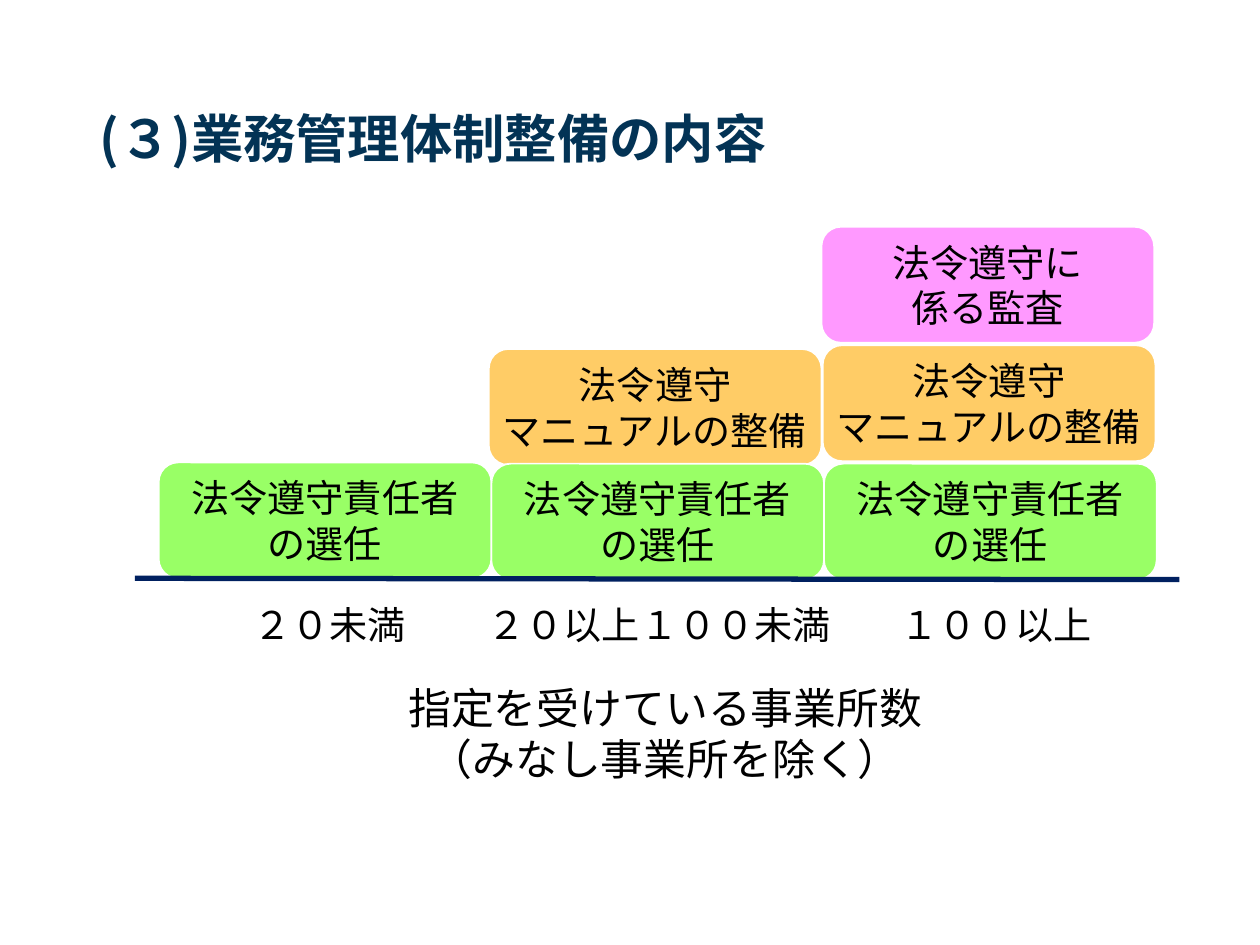
from dataclasses import dataclass

from lxml import etree
from pptx import Presentation
from pptx.dml.color import RGBColor
from pptx.enum.shapes import MSO_CONNECTOR, MSO_SHAPE
from pptx.enum.text import MSO_ANCHOR, PP_ALIGN
from pptx.oxml.ns import qn
from pptx.util import Inches, Pt

ROUNDED = MSO_SHAPE.ROUNDED_RECTANGLE
STRAIGHT = MSO_CONNECTOR.STRAIGHT
MIDDLE, TOP = MSO_ANCHOR.MIDDLE, MSO_ANCHOR.TOP
CENTER, LEFT = PP_ALIGN.CENTER, PP_ALIGN.LEFT

FONT = "Noto Sans CJK JP"
BLACK, WHITE, NAVY, TITLE_BLUE = "000000", "FFFFFF", "002060", "033355"
BLOCK_WIDTH, BLOCK_HEIGHT = 2.64, 0.92
BODY_SIZE = 21.8


@dataclass
class Duty:
    lines: list[str]
    fill: str
    tight: bool = False


@dataclass
class Block:
    duty: Duty
    left: float
    top: float


@dataclass
class Label:
    lines: list[str]
    left: float
    top: float
    width: float
    height: float
    size: float = BODY_SIZE
    color: str = BLACK
    bold: bool = False
    align: PP_ALIGN = LEFT
    anchor: MSO_ANCHOR = TOP
    wrap: bool = True
    spacing: float = 1.0


OFFICER = Duty(["法令遵守責任者", "の選任"], "99FF66")
MANUAL = Duty(["法令遵守", "マニュアルの整備"], "FFCC66", tight=True)
AUDIT = Duty(["法令遵守に", "係る監査"], "FF99FF")

# Staircase of duties, from the largest operators to the smallest
BLOCKS = [
    Block(AUDIT, 6.52, 1.8),
    Block(MANUAL, 6.53, 2.74),
    Block(OFFICER, 6.54, 3.68),
    Block(MANUAL, 3.88, 2.77),
    Block(OFFICER, 3.9, 3.68),
    Block(OFFICER, 1.26, 3.67),
]

TITLE = Label(["(３)業務管理体制整備の内容"], 0.69, 0.4, 8.62, 1.45, size=29.9,
              color=TITLE_BLUE, bold=True, anchor=MIDDLE, spacing=0.9)
AXIS_LABELS = [
    Label(["２０未満"], 1.91, 4.72, 1.62, 0.47, wrap=False),
    Label(["２０以上１００未満"], 3.77, 4.72, 3.01, 0.47, wrap=False),
    Label(["１００以上"], 7.05, 4.72, 1.94, 0.47, wrap=False),
    Label(["指定を受けている事業所数", "（みなし事業所を除く）"],
          2.22, 5.36, 6.12, 0.93, size=24.5, align=CENTER),
]


def rgb(color: str) -> RGBColor:
    return RGBColor.from_string(color)


def write(frame, lines: list[str], size: float, color: str = BLACK,
          bold: bool = False, align: PP_ALIGN = CENTER, spacing: float = 1.0) -> None:
    frame.text = "\n".join(lines)
    for para in frame.paragraphs:
        para.alignment = align
        para.line_spacing = spacing
        font = para.font
        font.name, font.size, font.bold = FONT, Pt(size), bold
        font.color.rgb = rgb(color)
        # Japanese text takes the East Asian typeface
        defaults = para._p.pPr.find(qn("a:defRPr"))
        etree.SubElement(defaults, qn("a:ea")).set("typeface", FONT)


def draw_block(page, block: Block) -> None:
    box = page.shapes.add_shape(ROUNDED, Inches(block.left), Inches(block.top),
                                Inches(BLOCK_WIDTH), Inches(BLOCK_HEIGHT))
    box.shadow.inherit = False
    box.fill.solid()
    box.fill.fore_color.rgb = rgb(block.duty.fill)
    box.line.color.rgb = rgb(WHITE)
    box.line.width = Pt(1)
    frame = box.text_frame
    frame.word_wrap = True
    frame.vertical_anchor = MIDDLE
    if block.duty.tight:
        frame.margin_left = frame.margin_right = 0
        frame.margin_top = frame.margin_bottom = 0
    write(frame, block.duty.lines, BODY_SIZE)


def draw_label(page, label: Label) -> None:
    box = page.shapes.add_textbox(Inches(label.left), Inches(label.top),
                                  Inches(label.width), Inches(label.height))
    frame = box.text_frame
    frame.word_wrap = label.wrap
    frame.vertical_anchor = label.anchor
    write(frame, label.lines, label.size, label.color, label.bold,
          label.align, label.spacing)


def draw_baseline(page) -> None:
    line = page.shapes.add_connector(STRAIGHT, Inches(1.07), Inches(4.59),
                                     Inches(9.36), Inches(4.6))
    line.line.color.rgb = rgb(NAVY)
    line.line.width = Pt(3)
    etree.SubElement(line._element.spPr, qn("a:effectLst"))


def main() -> None:
    deck = Presentation()
    deck.slide_width, deck.slide_height = Inches(10), Inches(7.5)
    page = deck.slides.add_slide(deck.slide_layouts[6])

    # Heading
    draw_label(page, TITLE)

    # Duties by operator size
    for block in BLOCKS:
        draw_block(page, block)

    # Axis and its labels
    draw_baseline(page)
    for label in AXIS_LABELS:
        draw_label(page, label)

    deck.save("out.pptx")


if __name__ == "__main__":
    main()
